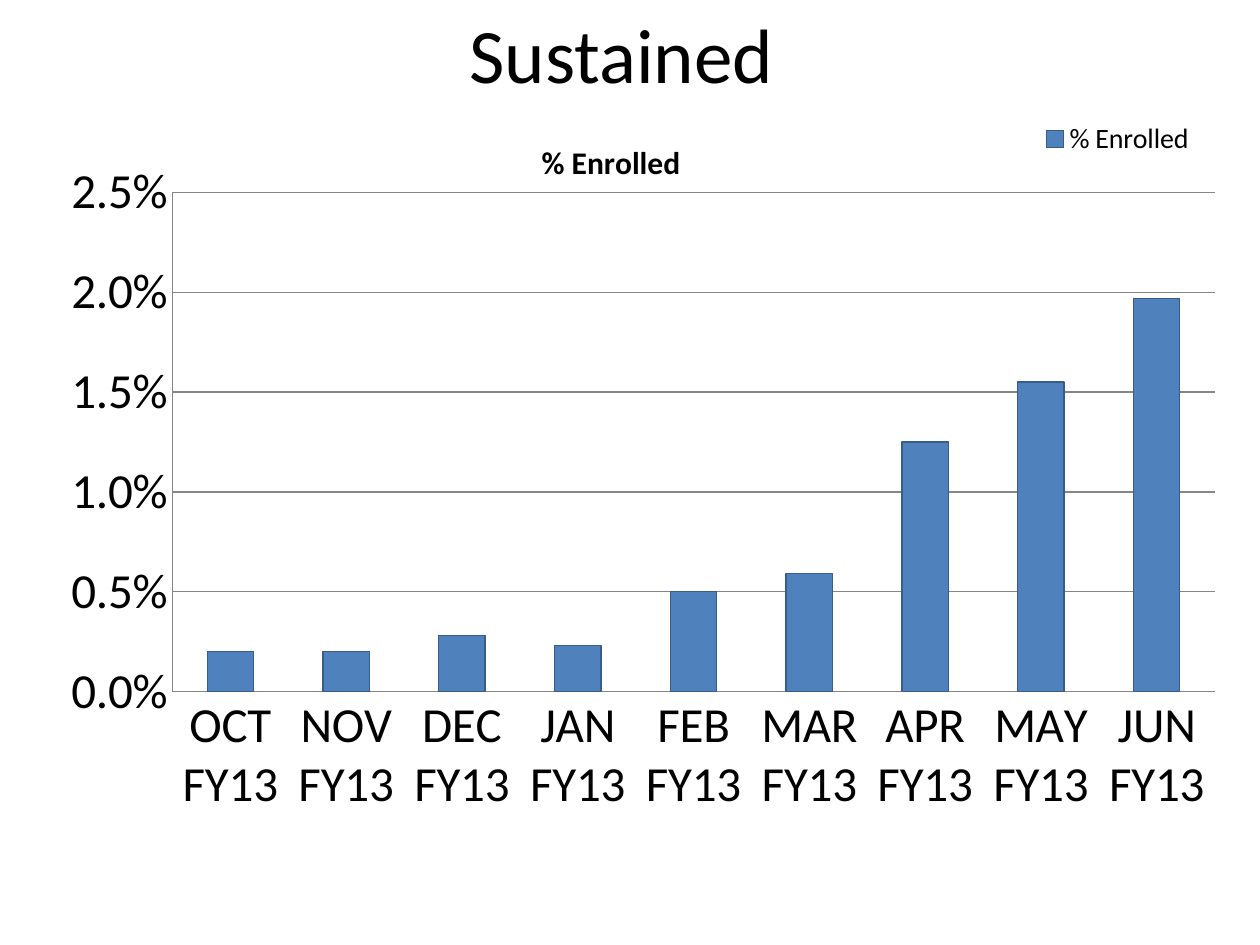
from lxml.etree import SubElement
from pptx import Presentation
from pptx.chart.data import CategoryChartData
from pptx.dml.color import RGBColor
from pptx.enum.chart import XL_CHART_TYPE, XL_LEGEND_POSITION, XL_TICK_MARK
from pptx.enum.text import MSO_ANCHOR, PP_ALIGN
from pptx.oxml.ns import qn
from pptx.util import Cm, Pt

MONTHS = ["OCT", "NOV", "DEC", "JAN", "FEB", "MAR", "APR", "MAY", "JUN"]
ENROLLED = [0.002, 0.002, 0.0028, 0.0023, 0.005, 0.0059, 0.0125, 0.0155, 0.0197]


def color(value):
    return RGBColor.from_string(value)


def format_font(font, size, bold=False, ink="000000", name="Calibri"):
    font.name = name
    font.size = Pt(size)
    font.bold = bold
    font.color.rgb = color(ink)


def add_text(frame, text, align=PP_ALIGN.CENTER, **style):
    para = frame.paragraphs[0]
    para.alignment = align
    span = para.add_run()
    span.text = text
    format_font(span.font, **style)


def place(part, after=None, inner=False, **fractions):
    """Fix a chart part at fractions of the chart area."""
    for old in part.findall(qn("c:layout")):
        part.remove(old)
    layout = SubElement(part, qn("c:layout"))
    manual = SubElement(layout, qn("c:manualLayout"))
    if inner:
        SubElement(manual, qn("c:layoutTarget")).set("val", "inner")
    for key in ("x", "y"):
        SubElement(manual, qn(f"c:{key}Mode")).set("val", "edge")
    for key, value in fractions.items():
        SubElement(manual, qn(f"c:{key}")).set("val", str(value))
    if after:
        part.find(qn(after)).addnext(layout)
    else:
        part.insert(0, layout)


class SlideBuilder:
    fill = "4F81BD"
    outline = "385D8A"
    grid = "868686"

    def __init__(self, deck):
        self.page = deck.slides.add_slide(deck.slide_layouts[5])

    def title(self, text, left, top, width, height):
        box = self.page.shapes.title
        box.left, box.top, box.width, box.height = map(Cm, (left, top, width, height))
        box.text_frame.vertical_anchor = MSO_ANCHOR.MIDDLE
        add_text(box.text_frame, text, size=44)
        # Keep the title in front of the chart
        self.page.shapes.element.append(box.element)

    def column_chart(self, name, categories, values, left, top, width, height):
        data = CategoryChartData()
        data.categories = categories
        data.add_series(name, values)
        chart = self.page.shapes.add_chart(
            XL_CHART_TYPE.COLUMN_CLUSTERED,
            *map(Cm, (left, top, width, height)), data).chart
        format_font(chart.font, 18)

        # Columns
        plot = chart.plots[0]
        plot.gap_width = 150
        plot.vary_by_categories = False
        bars = plot.series[0].format
        bars.fill.solid()
        bars.fill.fore_color.rgb = color(self.fill)
        bars.line.color.rgb = color(self.outline)
        bars.line.width = Pt(0.75)

        # Axes
        value_axis = chart.value_axis
        for axis in (chart.category_axis, value_axis):
            axis.major_tick_mark = axis.minor_tick_mark = XL_TICK_MARK.NONE
            axis.format.line.color.rgb = color(self.grid)
            format_font(axis.tick_labels.font, 28)
        value_axis.minimum_scale = 0
        value_axis.maximum_scale = 0.025
        value_axis.major_unit = 0.005
        value_axis.major_gridlines.format.line.color.rgb = color(self.grid)
        value_axis.tick_labels.number_format = "[$-10409]#,##0.0#%"
        value_axis.tick_labels.number_format_is_linked = False

        # Chart title and legend
        chart.has_title = True
        add_text(chart.chart_title.text_frame, name, size=18, bold=True)
        chart.has_legend = True
        legend = chart.legend
        legend.position = XL_LEGEND_POSITION.RIGHT
        legend.include_in_layout = False
        format_font(legend.font, 16)

        # Positions within the chart
        area = chart.element.find(qn("c:chart"))
        place(area.find(qn("c:plotArea")), inner=True, x=0.13, y=0.12, w=0.86, h=0.61)
        place(area.find(qn("c:title")), after="c:tx", x=0.43, y=0.05)
        place(area.find(qn("c:legend")), after="c:legendPos", x=0.83, y=0.02, w=0.16, h=0.07)


def main():
    deck = Presentation()
    deck.slide_width, deck.slide_height = Cm(25.4), Cm(19.05)
    slide = SlideBuilder(deck)
    slide.column_chart("% Enrolled", [f"{month} FY13" for month in MONTHS], ENROLLED,
                       left=0.3, top=1.9, width=24.43, height=16.5)
    slide.title("Sustained ", left=0, top=-0.2, width=25.4, height=2.54)
    deck.save("out.pptx")


if __name__ == "__main__":
    main()
